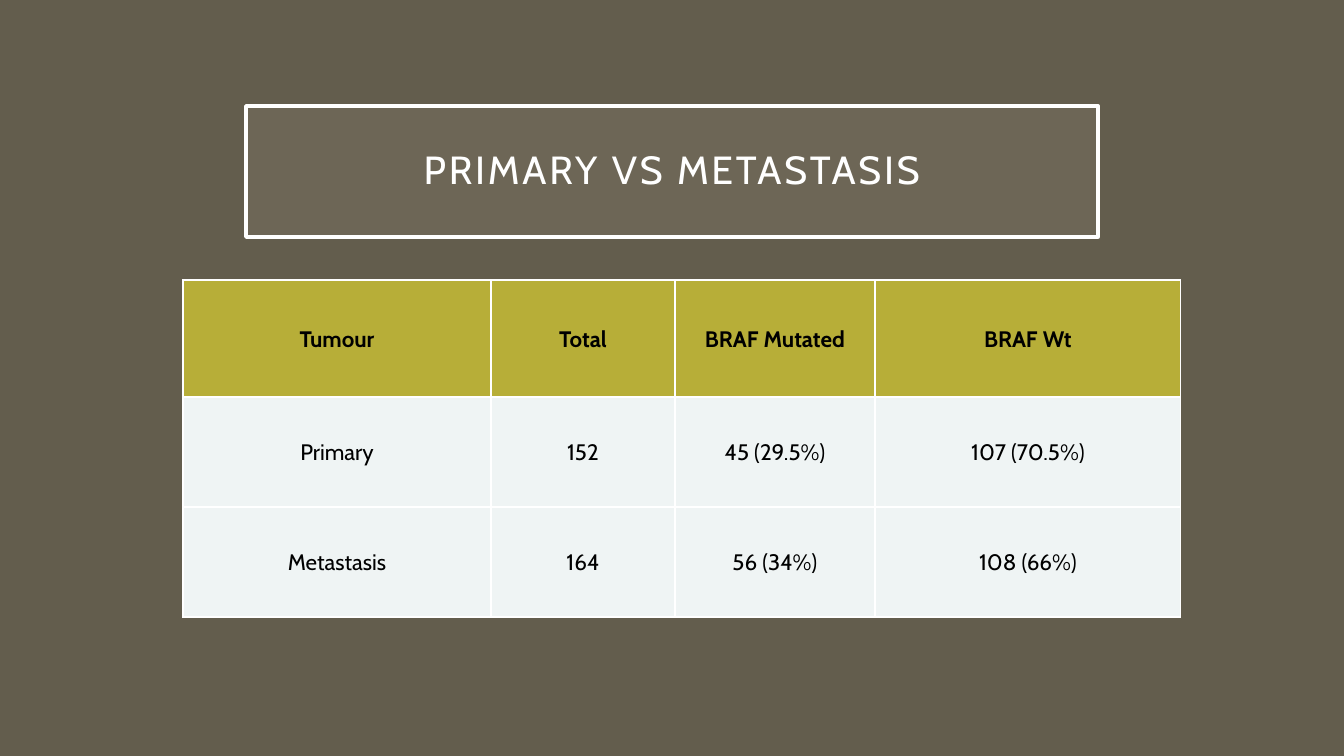
from lxml.etree import SubElement
from pptx import Presentation
from pptx.dml.color import RGBColor
from pptx.enum.shapes import MSO_SHAPE
from pptx.enum.text import MSO_ANCHOR, PP_ALIGN
from pptx.oxml.ns import qn
from pptx.util import Inches, Pt

OLIVE_BROWN = RGBColor(0x63, 0x5D, 0x4D)
TAUPE = RGBColor(0xA7, 0xA0, 0x8E)
WHITE = RGBColor(0xFF, 0xFF, 0xFF)
BLACK = RGBColor(0, 0, 0)
MUSTARD = RGBColor(0xB7, 0xAE, 0x38)
PALE_GREY = RGBColor(0xEF, 0xF4, 0xF4)

TITLE_FORMAT = {"name": "Cabin", "size": Pt(28), "bold": False}
HEADER_FORMAT = {"name": "Cabin", "size": Pt(16), "bold": True}
BODY_FORMAT = {**HEADER_FORMAT, "bold": False}

TUMOUR_ROWS = [
    ("Tumour", "Total", "BRAF Mutated", "BRAF Wt"),
    ("Primary", "152", "45 (29.5%)", "107 (70.5%)"),
    ("Metastasis", "164", "56 (34%)", "108 (66%)"),
]
COLUMN_WIDTHS = (308, 184, 200, 306)
ROW_HEIGHTS = (117, 110, 110)


def px(length):
    return round(length * Inches(1) / 100.8)


def set_all(target, values):
    for name, value in values.items():
        setattr(target, name, value)


def write_text(frame, text, font_format, color):
    paragraph = frame.paragraphs[0]
    paragraph.alignment = PP_ALIGN.CENTER
    run = paragraph.add_run()
    run.text = text
    set_all(run.font, font_format)
    run.font.color.rgb = color
    return paragraph, run


def margins(side, bottom):
    return {"margin_left": px(side), "margin_top": px(side),
            "margin_right": px(side), "margin_bottom": px(bottom)}


def add_title(slide, left, top, width, height):
    banner = slide.shapes.add_shape(
        MSO_SHAPE.RECTANGLE, px(left), px(top), px(width), px(height))
    banner.shadow.inherit = False
    banner.fill.solid()
    banner.fill.fore_color.rgb = TAUPE
    tint = banner.fill._xPr.find(qn("a:solidFill"))[0]
    SubElement(tint, qn("a:alpha"), val="15000")
    banner.line.color.rgb = WHITE
    banner.line.width = Pt(2.5)
    set_all(banner.text_frame, {
        **margins(20, 20), "word_wrap": True,
        "vertical_anchor": MSO_ANCHOR.MIDDLE})
    paragraph, run = write_text(
        banner.text_frame, "PRIMARY VS METASTASIS", TITLE_FORMAT, WHITE)
    paragraph.line_spacing = 0.9
    run._r.get_or_add_rPr().set("spc", "200")


def add_borders(cell):
    properties = cell._tc.get_or_add_tcPr()
    for position, side in enumerate(("lnL", "lnR", "lnT", "lnB")):
        border = properties.makeelement(qn(f"a:{side}"), {"w": str(Pt(1))})
        fill = SubElement(border, qn("a:solidFill"))
        SubElement(fill, qn("a:srgbClr"), val=str(WHITE))
        properties.insert(position, border)


def add_tumour_table(slide, left, top):
    table = slide.shapes.add_table(
        len(ROW_HEIGHTS), len(COLUMN_WIDTHS), px(left), px(top),
        px(sum(COLUMN_WIDTHS)), px(sum(ROW_HEIGHTS))).table
    for column, width in zip(table.columns, COLUMN_WIDTHS):
        column.width = px(width)
    for row, height in zip(table.rows, ROW_HEIGHTS):
        row.height = px(height)
    for row_index, entries in enumerate(TUMOUR_ROWS):
        is_header = row_index == 0
        for column_index, entry in enumerate(entries):
            cell = table.cell(row_index, column_index)
            set_all(cell, {**margins(1, 0),
                           "vertical_anchor": MSO_ANCHOR.MIDDLE})
            cell.fill.solid()
            cell.fill.fore_color.rgb = MUSTARD if is_header else PALE_GREY
            add_borders(cell)
            write_text(cell.text_frame, entry,
                       HEADER_FORMAT if is_header else BODY_FORMAT, BLACK)


def main():
    presentation = Presentation()
    set_all(presentation, {"slide_width": px(1344), "slide_height": px(756)})
    slide = presentation.slides.add_slide(presentation.slide_layouts[6])
    slide.background.fill.solid()
    slide.background.fill.fore_color.rgb = OLIVE_BROWN
    add_title(slide, 246, 106, 852, 131)
    add_tumour_table(slide, 183, 280)
    presentation.save("out.pptx")


if __name__ == "__main__":
    main()
